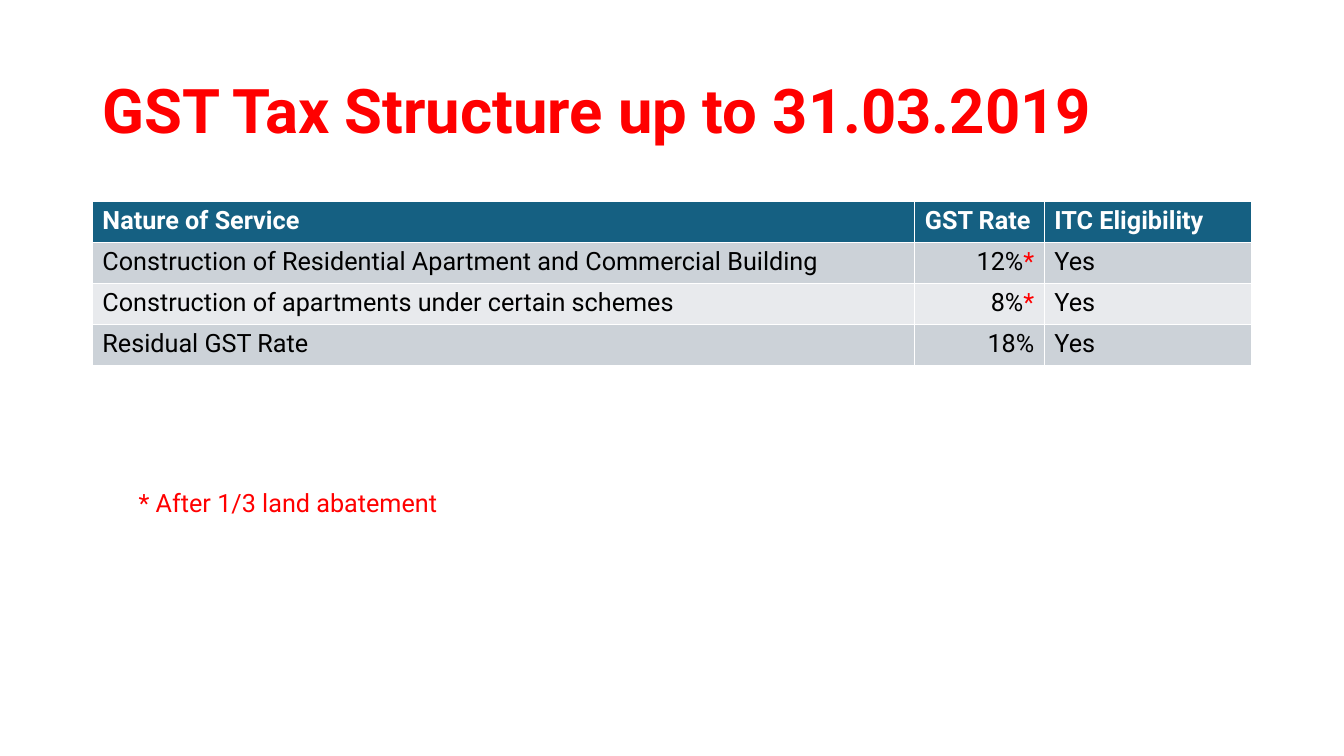
"""Build a slide showing the GST tax structure up to 31.03.2019."""
from pptx import Presentation
from pptx.dml.color import RGBColor
from pptx.enum.shapes import MSO_SHAPE
from pptx.enum.text import MSO_ANCHOR, MSO_AUTO_SIZE, PP_ALIGN
from pptx.util import Pt

TITLE = "GST Tax Structure up to 31.03.2019"
RATES = [
    ("Nature of Service", "GST Rate", "ITC Eligibility"),
    ("Construction of Residential Apartment and Commercial Building", "12%*", "Yes"),
    ("Construction of apartments under certain schemes", "8%*", "Yes"),
    ("Residual GST Rate", "18%", "Yes"),
]
FOOTNOTE = "* After 1/3 land abatement"

RED = RGBColor(0xFF, 0x00, 0x00)
WHITE = RGBColor(0xFF, 0xFF, 0xFF)
BLACK = RGBColor(0x00, 0x00, 0x00)
HEADER_BLUE = RGBColor(0x15, 0x60, 0x82)
BAND_DARK = RGBColor(0xCC, 0xD2, 0xD8)
BAND_LIGHT = RGBColor(0xE8, 0xEA, 0xED)

FONT = "Roboto"
LEFT = 66
COLUMN_WIDTHS = (587.5, 92.5, 148)
TABLE_WIDTH = sum(COLUMN_WIDTHS)
ROW_HEIGHT = 29.2
RATE_COLUMN = 1


def add_span(para, text, *, size=18, color=BLACK, bold=False):
    span = para.add_run()
    span.text = text
    span.font.name = FONT
    span.font.size = Pt(size)
    span.font.bold = bold
    span.font.color.rgb = color


def add_title(page):
    title = page.shapes.title
    title.left, title.top, title.width, title.height = (
        Pt(LEFT), Pt(28.8), Pt(TABLE_WIDTH), Pt(104.4))
    frame = title.text_frame
    frame.auto_size = MSO_AUTO_SIZE.NONE
    frame.vertical_anchor = MSO_ANCHOR.MIDDLE
    para = frame.paragraphs[0]
    para.alignment = PP_ALIGN.LEFT
    para.line_spacing = 0.9
    add_span(para, TITLE, size=44, color=RED, bold=True)


def add_rates(page):
    table = page.shapes.add_table(
        len(RATES), len(COLUMN_WIDTHS), Pt(LEFT), Pt(144),
        Pt(TABLE_WIDTH), Pt(ROW_HEIGHT * len(RATES))).table
    for column, width in zip(table.columns, COLUMN_WIDTHS):
        column.width = Pt(width)
    for row_index, row in enumerate(RATES):
        header = row_index == 0
        band = BAND_DARK if row_index % 2 else BAND_LIGHT
        for column_index, text in enumerate(row):
            cell = table.cell(row_index, column_index)
            cell.fill.solid()
            cell.fill.fore_color.rgb = HEADER_BLUE if header else band
            para = cell.text_frame.paragraphs[0]
            if column_index == RATE_COLUMN and not header:
                para.alignment = PP_ALIGN.RIGHT
            value, star, _ = text.partition("*")
            add_span(para, value, color=WHITE if header else BLACK, bold=header)
            if star:
                add_span(para, star, color=RED)


def add_footnote(page):
    box = page.shapes.add_shape(
        MSO_SHAPE.ROUNDED_RECTANGLE, Pt(90), Pt(338.4), Pt(587.5), Pt(41))
    box.shadow.inherit = False
    box.fill.solid()
    box.fill.fore_color.rgb = WHITE
    box.line.fill.background()
    box.text_frame.word_wrap = True
    box.text_frame.vertical_anchor = MSO_ANCHOR.MIDDLE
    para = box.text_frame.paragraphs[0]
    para.alignment = PP_ALIGN.LEFT
    add_span(para, FOOTNOTE, color=RED)


def main():
    deck = Presentation()
    deck.slide_width, deck.slide_height = Pt(960), Pt(540)
    page = deck.slides.add_slide(deck.slide_layouts.get_by_name("Title Only"))
    add_title(page)
    add_rates(page)
    add_footnote(page)
    deck.save("out.pptx")


if __name__ == "__main__":
    main()
